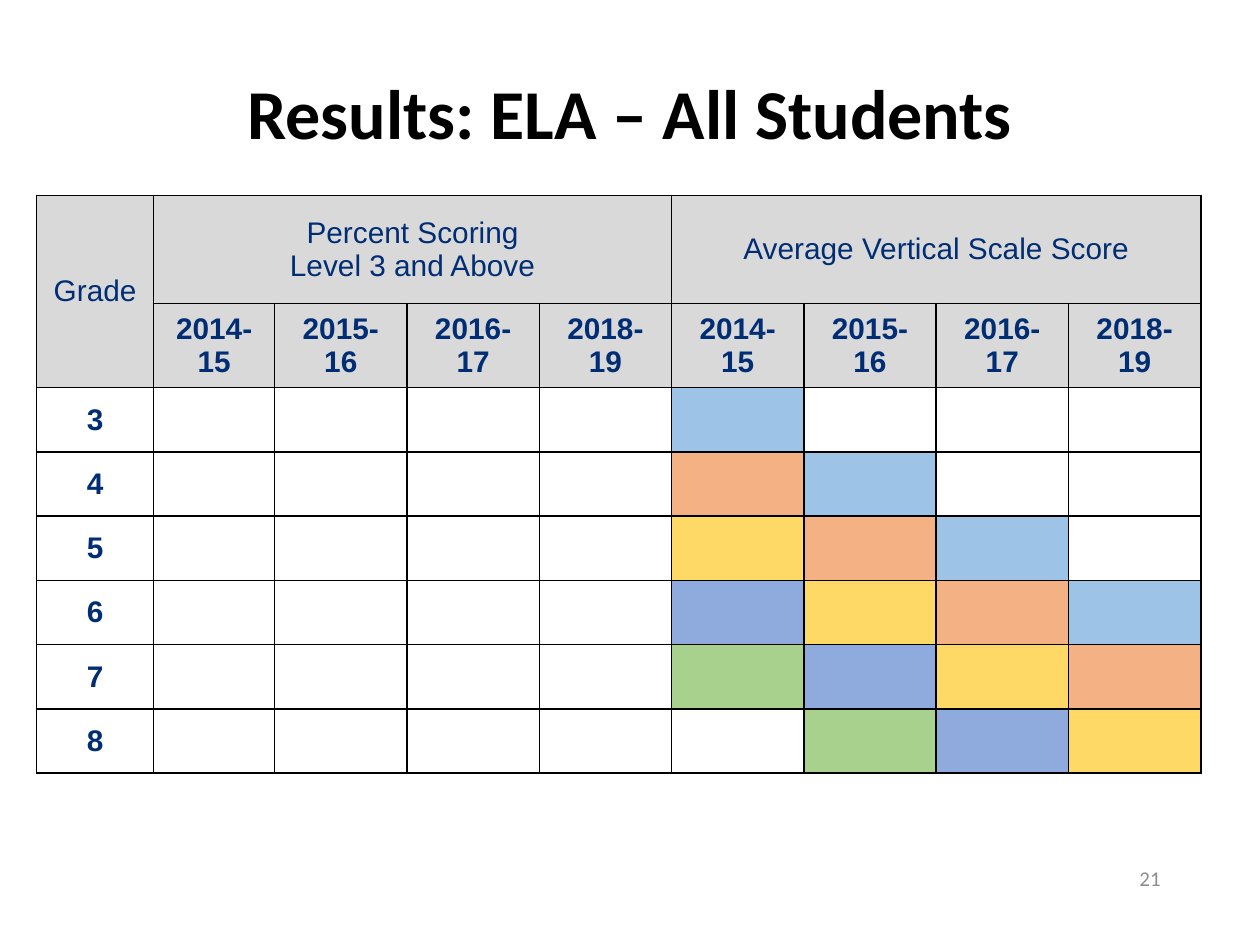
from dataclasses import dataclass

from lxml.etree import SubElement
from pptx import Presentation
from pptx.dml.color import RGBColor
from pptx.enum.text import MSO_ANCHOR, PP_ALIGN
from pptx.oxml.ns import qn
from pptx.table import Table, _Cell
from pptx.text.text import TextFrame
from pptx.util import Inches, Pt

BLACK, WHITE, NAVY = "000000", "FFFFFF", "002D73"
HEADER_FILL = "D9D9D9"
YEARS = ["2014-15", "2015-16", "2016-17", "2018-19"]
GRADES = ["3", "4", "5", "6", "7", "8"]
# Each cohort moves up one grade per tested year, so it runs down a diagonal.
COHORT_FILLS = ["9DC3E6", "F4B183", "FFD966", "8FAADC", "A9D18E"]
COLUMN_WIDTHS = [0.93, 0.96] + [1.05] * 7
ROW_HEIGHTS = [0.86, 0.49] + [0.51] * len(GRADES)
PERCENT_COLUMN = 1
SCORE_COLUMN = PERCENT_COLUMN + len(YEARS)
FIRST_GRADE_ROW = 2


@dataclass
class TextStyle:
    font: str
    size: float
    color: str
    bold: bool = False
    align: PP_ALIGN = PP_ALIGN.CENTER


@dataclass
class HeaderSpan:
    text: str
    column: int
    rows: int
    columns: int


TITLE_STYLE = TextStyle("Calibri", 40, BLACK, bold=True)
PAGE_STYLE = TextStyle("Calibri", 12, "8C8C8C", align=PP_ALIGN.RIGHT)
GROUP_STYLE = TextStyle("Arial", 17, NAVY)
LABEL_STYLE = TextStyle("Arial", 17, NAVY, bold=True)
HEADER_SPANS = [
    HeaderSpan("Grade", 0, 2, 1),
    HeaderSpan("Percent Scoring\nLevel 3 and Above", PERCENT_COLUMN, 1, len(YEARS)),
    HeaderSpan("Average Vertical Scale Score", SCORE_COLUMN, 1, len(YEARS)),
]


def rgb(color: str) -> RGBColor:
    return RGBColor.from_string(color)


def write(frame: TextFrame, text: str, style: TextStyle) -> None:
    frame.text = text
    frame.word_wrap = True
    for paragraph in frame.paragraphs:
        paragraph.alignment = style.align
        for run in paragraph.runs:
            run.font.name = style.font
            run.font.size = Pt(style.size)
            run.font.bold = style.bold
            run.font.color.rgb = rgb(style.color)


def paint_cell(cell: _Cell, fill: str) -> None:
    """Set the cell's fill and its thin black borders."""
    cell.vertical_anchor = MSO_ANCHOR.MIDDLE
    properties = cell._tc.get_or_add_tcPr()
    for side in ("a:lnL", "a:lnR", "a:lnT", "a:lnB"):
        border = SubElement(properties, qn(side), w=str(Pt(1)))
        solid = SubElement(border, qn("a:solidFill"))
        SubElement(solid, qn("a:srgbClr"), val=BLACK)
    cell.fill.solid()
    cell.fill.fore_color.rgb = rgb(fill)


def fill_color(row: int, column: int) -> str:
    if row < FIRST_GRADE_ROW:
        return HEADER_FILL
    cohort = (row - FIRST_GRADE_ROW) - (column - SCORE_COLUMN)
    if column >= SCORE_COLUMN and 0 <= cohort < len(COHORT_FILLS):
        return COHORT_FILLS[cohort]
    return WHITE


def fill_results(table: Table) -> None:
    for column, width in zip(table.columns, COLUMN_WIDTHS):
        column.width = Inches(width)
    for row, height in zip(table.rows, ROW_HEIGHTS):
        row.height = Inches(height)
    for row in range(len(ROW_HEIGHTS)):
        for column in range(len(COLUMN_WIDTHS)):
            paint_cell(table.cell(row, column), fill_color(row, column))
    for span in HEADER_SPANS:
        cell = table.cell(0, span.column)
        cell.merge(table.cell(span.rows - 1, span.column + span.columns - 1))
        write(cell.text_frame, span.text, GROUP_STYLE)
    for column, year in enumerate(YEARS * 2, start=PERCENT_COLUMN):
        write(table.cell(1, column).text_frame, year, LABEL_STYLE)
    for row, grade in enumerate(GRADES, start=FIRST_GRADE_ROW):
        write(table.cell(row, 0).text_frame, grade, LABEL_STYLE)


def main() -> None:
    presentation = Presentation()
    presentation.slide_width, presentation.slide_height = Inches(10), Inches(7.5)
    slide = presentation.slides.add_slide(presentation.slide_layouts[5])

    title = slide.shapes.title
    title.left, title.top = Inches(0), Inches(0.43)
    title.width, title.height = Inches(10), Inches(1)
    title.text_frame.vertical_anchor = MSO_ANCHOR.MIDDLE
    write(title.text_frame, "Results: ELA – All Students", TITLE_STYLE)
    title.text_frame.paragraphs[0].line_spacing = 0.9

    page_number = slide.shapes.add_textbox(
        Inches(7.06), Inches(6.77), Inches(2.25), Inches(0.4)
    )
    page_number.text_frame.vertical_anchor = MSO_ANCHOR.MIDDLE
    write(page_number.text_frame, "21", PAGE_STYLE)

    results = slide.shapes.add_table(
        len(ROW_HEIGHTS), len(COLUMN_WIDTHS),
        Inches(0.29), Inches(1.55), Inches(9.28), Inches(4.58),
    ).table
    fill_results(results)
    presentation.save("out.pptx")


if __name__ == "__main__":
    main()
